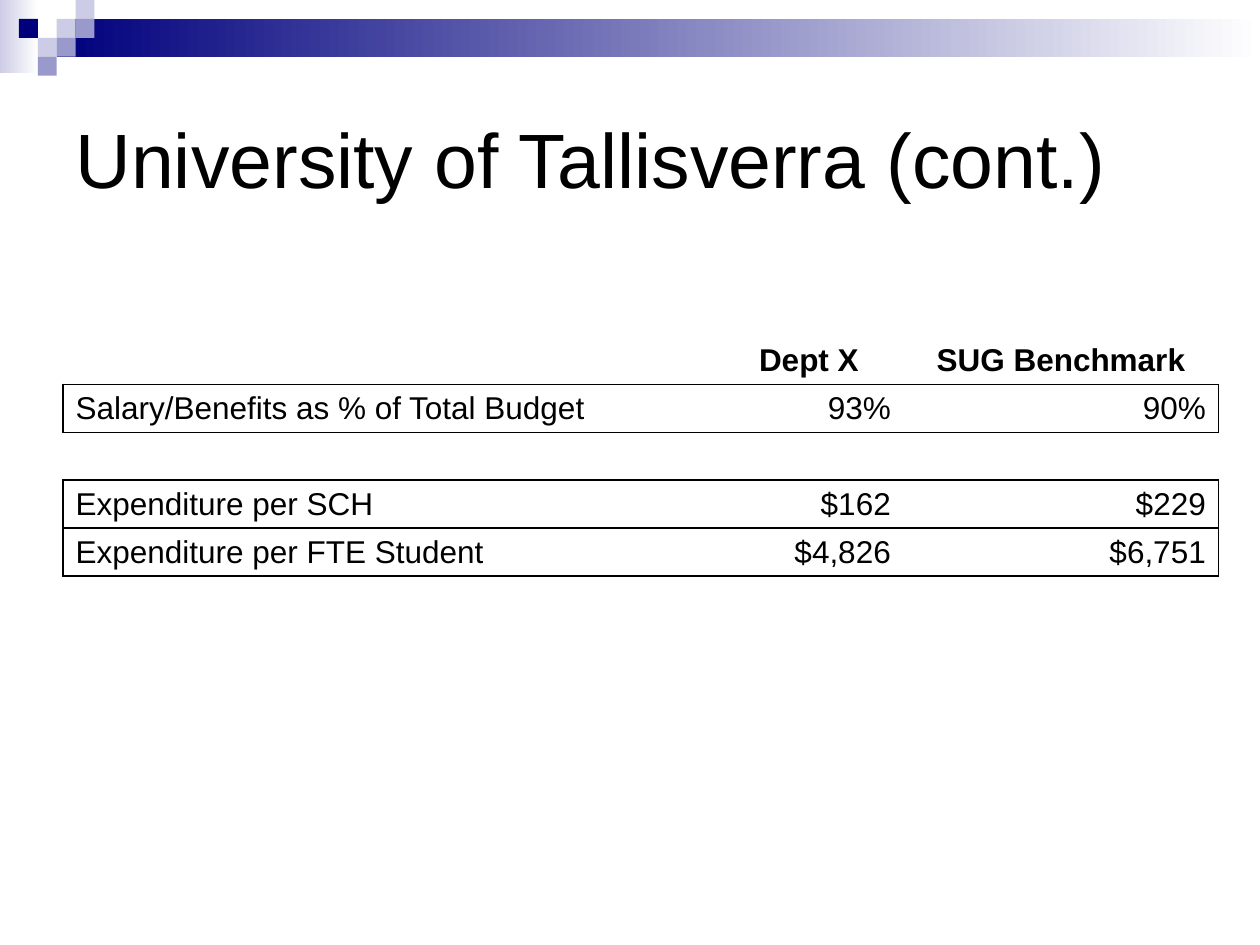
from pptx import Presentation
from pptx.dml.color import RGBColor
from pptx.enum.shapes import MSO_SHAPE
from pptx.enum.text import MSO_ANCHOR, PP_ALIGN
from pptx.oxml import parse_xml
from pptx.oxml.ns import nsdecls
from pptx.util import Inches, Pt

COLORS = {"navy": "00007D", "lilac": "CCCCE6", "violet": "9999CC", "white": "FFFFFF", "black": "000000"}
FONT = "Arial"
UNIT = 0.15
SQUARES = [(3, 1, "lilac"), (4, 0, "lilac"), (4, 1, "violet"), (2, 2, "lilac"),
           (1, 1, "navy"), (3, 2, "violet"), (2, 3, "violet")]
COLUMN_WIDTHS = [4.92, 0.25, 1.5, 2.5]
ROW_HEIGHT = 0.38
ROWS = [
    ["", "", "Dept X", "SUG Benchmark"],
    ["Salary/Benefits as % of Total Budget", "", "93%", "90%"],
    ["", "", "", ""],
    ["Expenditure per SCH", "", "$162", "$229"],
    ["Expenditure per FTE Student", "", "$4,826", "$6,751"],
]


def color(name):
    """Return the named colour."""
    return RGBColor.from_string(COLORS[name])


def format_text(paragraph, size, align, bold=False):
    """Set the font and alignment of a paragraph."""
    paragraph.alignment = align
    paragraph.font.name = FONT
    paragraph.font.size = Pt(size)
    paragraph.font.bold = bold
    paragraph.font.color.rgb = color("black")


def add_block(page, column, row, columns, rows, start, end=None):
    """Add a rectangle on the unit grid, solid or fading to the right."""
    block = page.shapes.add_shape(
        MSO_SHAPE.RECTANGLE, *(Inches(UNIT * n) for n in (column, row, columns, rows)))
    block.shadow.inherit = False
    block.line.fill.background()
    if end:
        block.fill.gradient()
        block.fill.gradient_angle = 0
        for stop, name in zip(block.fill.gradient_stops, (start, end)):
            stop.color.rgb = color(name)
    else:
        block.fill.solid()
        block.fill.fore_color.rgb = color(start)


def add_banner(page, width):
    """Add the fading bars and the small squares at the top."""
    add_block(page, 0, 0, 2, 3.87, "lilac", "white")
    add_block(page, 3, 1, width / UNIT - 3, 2, "navy", "white")
    for column, row, name in SQUARES:
        add_block(page, column, row, 1, 1, name)


def set_title(page, text):
    """Place and fill the title."""
    title = page.shapes.title
    title.left, title.top, title.width, title.height = map(Inches, (0.5, 0.5, 9, 1.5))
    title.text_frame.text = text
    title.text_frame.vertical_anchor = MSO_ANCHOR.MIDDLE
    format_text(title.text_frame.paragraphs[0], 44, PP_ALIGN.LEFT)


def set_borders(cell, visible):
    """Draw the visible sides of a cell and clear the others."""
    properties = cell._tc.get_or_add_tcPr()
    for side in "LRTB":
        fill = "<a:noFill/>"
        if side in visible:
            fill = f'<a:solidFill><a:srgbClr val="{COLORS["black"]}"/></a:solidFill>'
        properties.append(parse_xml(f'<a:ln{side} {nsdecls("a")} w="{Pt(1)}">{fill}</a:ln{side}>'))


def add_budget_table(page):
    """Add the table that compares the department with the benchmark."""
    table = page.shapes.add_table(
        len(ROWS), len(COLUMN_WIDTHS), Inches(0.5), Inches(2.67),
        Inches(sum(COLUMN_WIDTHS)), Inches(ROW_HEIGHT * len(ROWS))).table
    table.first_row = table.horz_banding = False
    for column, width in zip(table.columns, COLUMN_WIDTHS):
        column.width = Inches(width)
    for row_index, values in enumerate(ROWS):
        table.rows[row_index].height = Inches(ROW_HEIGHT)
        header = row_index == 0
        for column_index, value in enumerate(values):
            cell = table.cell(row_index, column_index)
            sides = "B" if header else "TB"
            if values[0]:
                sides += {0: "L", len(values) - 1: "R"}.get(column_index, "")
            set_borders(cell, sides)
            cell.fill.background()
            cell.vertical_anchor = MSO_ANCHOR.BOTTOM
            cell.text = value
            align = PP_ALIGN.CENTER if header else PP_ALIGN.RIGHT if column_index else PP_ALIGN.LEFT
            format_text(cell.text_frame.paragraphs[0], 18, align, header)


def main():
    """Build the slide and save it."""
    deck = Presentation()
    deck.slide_width, deck.slide_height = Inches(10), Inches(7.5)
    page = deck.slides.add_slide(deck.slide_layouts[5])
    add_banner(page, 10)
    set_title(page, "University of Tallisverra (cont.)")
    add_budget_table(page)
    deck.save("out.pptx")


if __name__ == "__main__":
    main()
